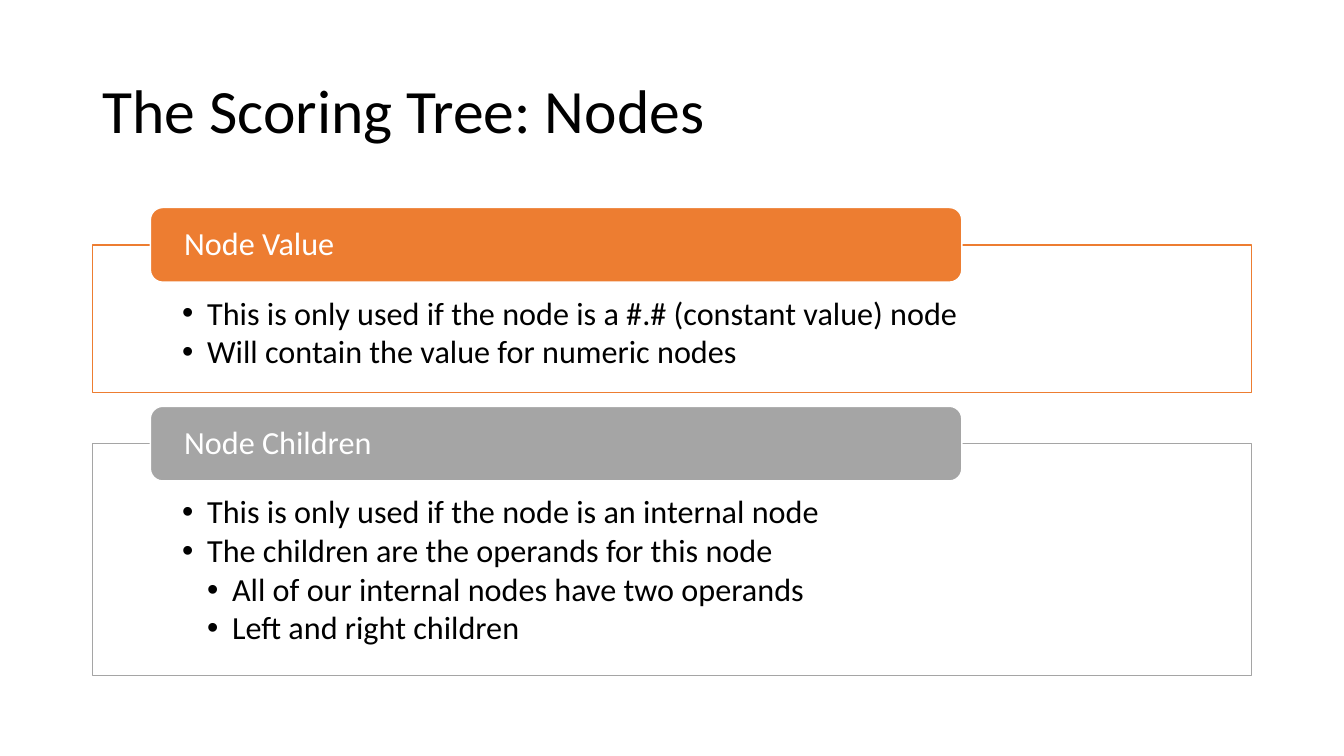
from pptx import Presentation
from pptx.dml.color import RGBColor
from pptx.enum.shapes import MSO_SHAPE as Preset
from pptx.enum.text import MSO_ANCHOR as Anchor, PP_ALIGN as Align
from pptx.oxml.ns import qn
from pptx.util import Cm, Pt
from lxml.etree import SubElement

BLACK = RGBColor(0x00, 0x00, 0x00)
WHITE = RGBColor(0xFF, 0xFF, 0xFF)
ORANGE = RGBColor(0xED, 0x7D, 0x31)
GRAY = RGBColor(0xA5, 0xA5, 0xA5)

LEFT, WIDTH = 2.33, 29.21
TAB_OFFSET, TAB_WIDTH, TAB_HEIGHT = 1.46, 20.45, 1.88
INDENT = 0.63

SECTIONS = [
    ("Node Value", ORANGE, 6.17, 3.73, [
        (0, "This is only used if the node is a #.# (constant value) node"),
        (0, "Will contain the value for numeric nodes"),
    ]),
    ("Node Children", GRAY, 11.18, 5.84, [
        (0, "This is only used if the node is an internal node"),
        (0, "The children are the operands for this node"),
        (1, "All of our internal nodes have two operands"),
        (1, "Left and right children"),
    ]),
]


class SlideBuilder:
    font = "Calibri"
    title_size = 44
    body_size = 23

    def __init__(self, deck):
        self.slide = deck.slides.add_slide(deck.slide_layouts[5])

    def add_text(self, paragraph, text, size, color):
        paragraph.alignment = Align.LEFT
        paragraph.line_spacing = 0.9
        run = paragraph.add_run()
        run.text = text
        run.font.name = self.font
        run.font.size = Pt(size)
        run.font.color.rgb = color

    def title(self, text):
        heading = self.slide.shapes.title
        heading.left, heading.top = Cm(LEFT), Cm(1.02)
        heading.width, heading.height = Cm(WIDTH), Cm(3.68)
        heading.text_frame.vertical_anchor = Anchor.MIDDLE
        self.add_text(heading.text_frame.paragraphs[0], text, self.title_size, BLACK)

    def box(self, preset, left, top, width, height, fill, line, margins, anchor):
        shape = self.slide.shapes.add_shape(
            preset, Cm(left), Cm(top), Cm(width), Cm(height))
        shape.shadow.inherit = False
        shape.fill.solid()
        shape.fill.fore_color.rgb = fill
        shape.line.color.rgb = line
        shape.line.width = Pt(1)
        frame = shape.text_frame
        frame.word_wrap = True
        frame.vertical_anchor = anchor
        side, above, below = margins
        frame.margin_left = frame.margin_right = Cm(side)
        frame.margin_top, frame.margin_bottom = Cm(above), Cm(below)
        return frame

    def bullet(self, paragraph, level, text):
        paragraph.level = level
        paragraph.space_after = Pt(2.8)
        self.add_text(paragraph, text, self.body_size, BLACK)
        properties = paragraph._p.get_or_add_pPr()
        properties.set("marL", str(Cm(INDENT * (level + 1))))
        properties.set("indent", str(-Cm(INDENT)))
        SubElement(properties, qn("a:buFont"), typeface="Arial")
        SubElement(properties, qn("a:buChar"), char="•")

    def section(self, name, color, top, height, points):
        body = self.box(Preset.RECTANGLE, LEFT, top, WIDTH, height,
                        WHITE, color, (2.26, 1.32, 0.46), Anchor.TOP)
        for index, (level, text) in enumerate(points):
            paragraph = body.add_paragraph() if index else body.paragraphs[0]
            self.bullet(paragraph, level, text)
        tab = self.box(Preset.ROUNDED_RECTANGLE, LEFT + TAB_OFFSET,
                       top - TAB_HEIGHT / 2, TAB_WIDTH, TAB_HEIGHT,
                       color, WHITE, (0.76, 0, 0), Anchor.MIDDLE)
        self.add_text(tab.paragraphs[0], name, self.body_size, WHITE)


def main():
    deck = Presentation()
    deck.slide_width, deck.slide_height = Cm(33.87), Cm(19.05)
    builder = SlideBuilder(deck)
    builder.title("The Scoring Tree: Nodes")
    for section in SECTIONS:
        builder.section(*section)
    deck.save("out.pptx")


if __name__ == "__main__":
    main()
